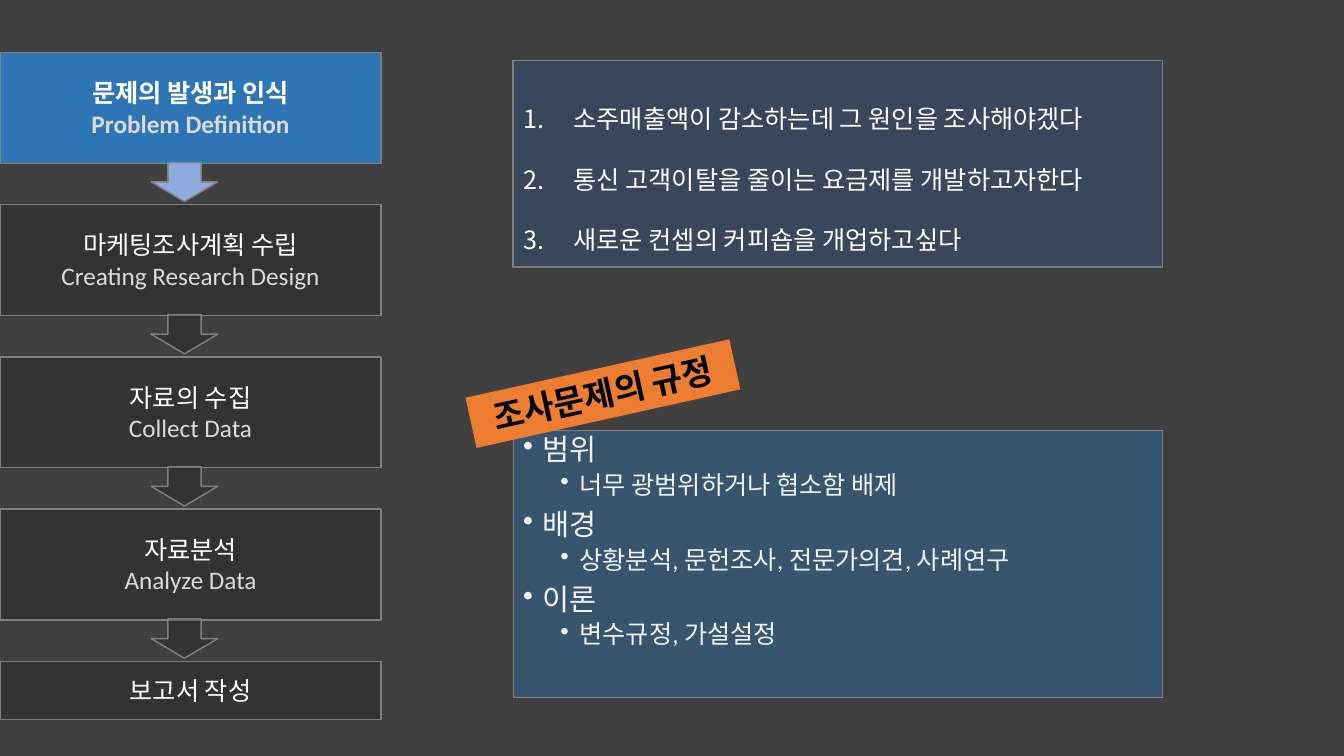
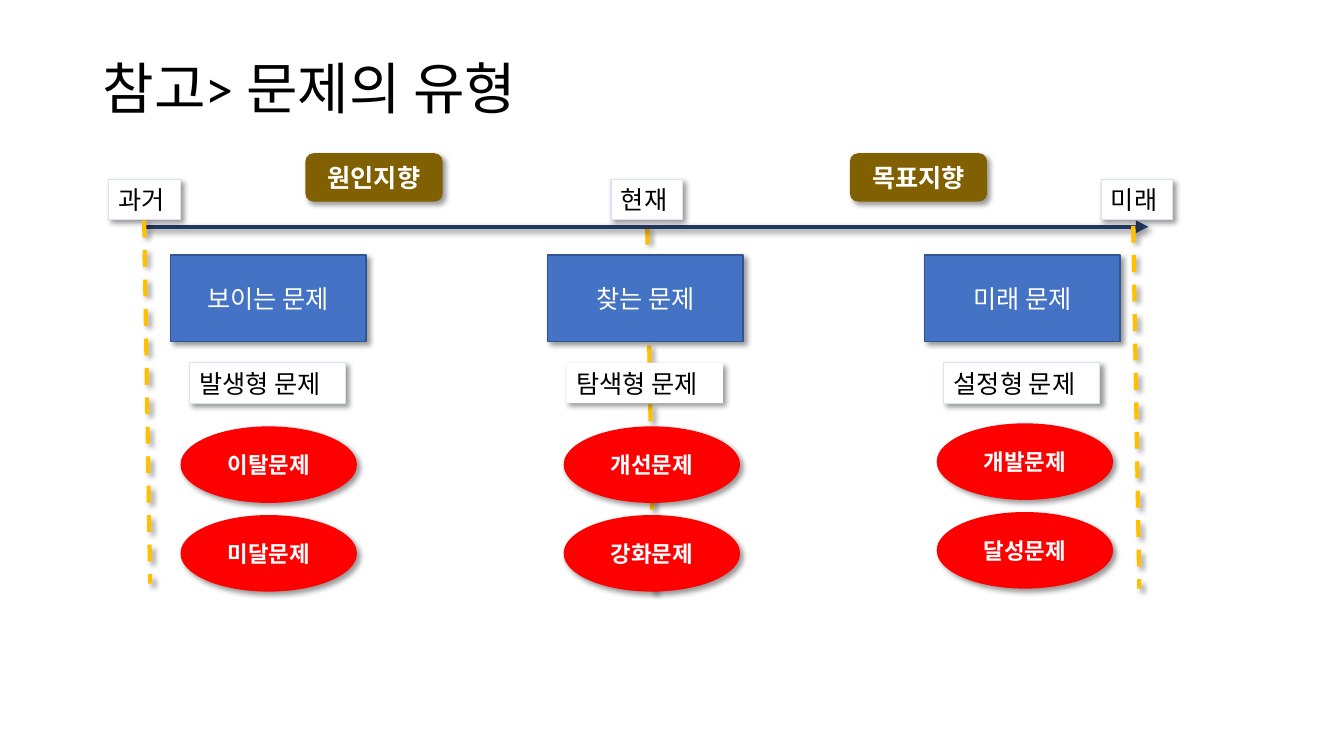
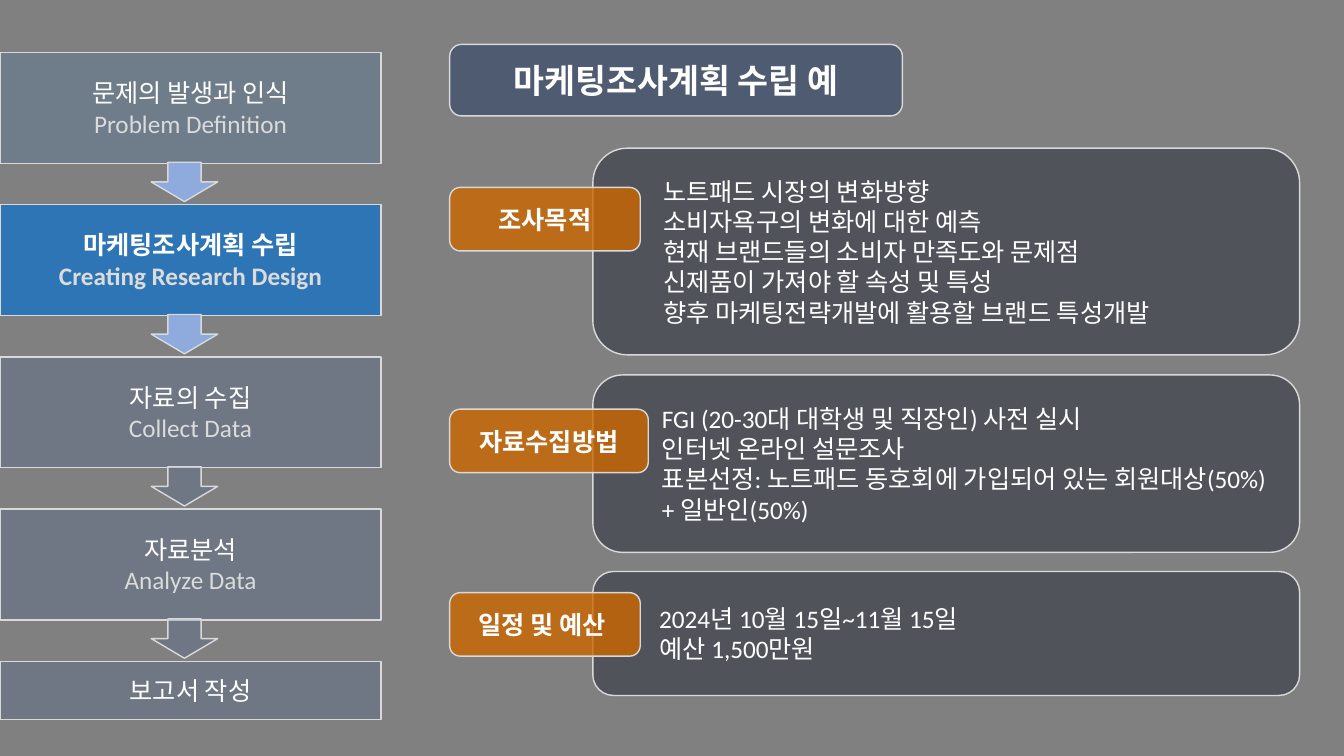
from pptx import Presentation
from pptx.dml.color import RGBColor
from pptx.enum.dml import MSO_LINE_DASH_STYLE as Dash
from pptx.enum.shapes import MSO_CONNECTOR as Link, MSO_SHAPE as Form
from pptx.enum.text import MSO_ANCHOR as Anchor, MSO_AUTO_SIZE as Fit, PP_ALIGN as Align
from pptx.oxml.ns import qn
from pptx.util import Inches, Pt
from lxml.etree import SubElement as sub

WHITE = RGBColor(0xFF, 0xFF, 0xFF)
BLACK = RGBColor(0, 0, 0)
DARK = RGBColor(0x40, 0x40, 0x40)
GRAY = RGBColor(0x80, 0x80, 0x80)
SILVER = RGBColor(0xD9, 0xD9, 0xD9)
PALE = RGBColor(0xDB, 0xDB, 0xDB)
FOG = RGBColor(0xF2, 0xF2, 0xF2)
SKY = RGBColor(0x8F, 0xAA, 0xDC)
BLUE = RGBColor(0x2E, 0x75, 0xB6)
DEEP = RGBColor(0x2F, 0x55, 0x97)
NAVY = RGBColor(0x20, 0x38, 0x64)
ROYAL = RGBColor(0x44, 0x72, 0xC4)
RIM = RGBColor(0x32, 0x54, 0x91)
ICE = RGBColor(0xDA, 0xE3, 0xF3)
SLATE = RGBColor(0x22, 0x2A, 0x35)
ORANGE = RGBColor(0xED, 0x7D, 0x31)
RUST = RGBColor(0xCC, 0x66, 0x00)
GOLD = RGBColor(0xFF, 0xC0, 0x00)
OLIVE = RGBColor(0x80, 0x60, 0x00)
RED = RGBColor(0xFF, 0, 0)

STEPS = [
    ("문제의 발생과 인식", "Problem Definition"),
    ("마케팅조사계획 수립", "Creating Research Design"),
    ("자료의 수집", "Collect Data"),
    ("자료분석", "Analyze Data"),
    ("보고서 작성",),
]
GOALS = [
    "소주매출액이 감소하는데 그 원인을 조사해야겠다",
    "통신 고객이탈을 줄이는 요금제를 개발하고자한다",
    "새로운 컨셉의 커피숍을 개업하고싶다",
]
SCOPE = [
    ("범위", "너무 광범위하거나 협소함 배제"),
    ("배경", "상황분석, 문헌조사, 전문가의견, 사례연구"),
    ("이론", "변수규정, 가설설정"),
]
KINDS = [
    ("보이는 문제", "발생형 문제", ("이탈문제", "미달문제"), 0.1, 1.7, ICE),
    ("찾는 문제", "탐색형 문제", ("개선문제", "강화문제"), 0.16, 1.7, None),
    ("미래 문제", "설정형 문제", ("개발문제", "달성문제"), 0.12, 1.67, ICE),
]
PLANS = [
    (1.47, 2.05, 0.39, 1.89, "조사목적", [
        "노트패드 시장의 변화방향",
        "소비자욕구의 변화에 대한 예측",
        "현재 브랜드들의 소비자 만족도와 문제점",
        "신제품이 가져야 할 속성 및 특성",
        "향후 마케팅전략개발에 활용할 브랜드 특성개발",
    ]),
    (3.72, 1.76, 0.34, 1.97, "자료수집방법", [
        "FGI (20-30대 대학생 및 직장인) 사전 실시",
        "인터넷 온라인 설문조사",
        "표본선정: 노트패드 동호회에 가입되어 있는 회원대상(50%) + 일반인(50%)",
    ]),
    (5.67, 1.23, 0.21, 1.89, "일정 및 예산 ", [
        "2024년 10월 15일~11월 15일",
        "예산 1,500만원",
    ]),
]


def effect(shape, shade):
    """Give a shape a soft shadow, or none at all."""
    props = shape._element.spPr
    for old in props.findall(qn("a:effectLst")):
        props.remove(old)
    box = sub(props, qn("a:effectLst"))
    if shade:
        drop = sub(box, qn("a:outerShdw"), blurRad=str(Pt(4)), dist=str(Pt(3)),
                   dir="2700000", algn="tl", rotWithShape="0")
        tint = sub(drop, qn("a:srgbClr"), val="000000")
        sub(tint, qn("a:alpha"), val="40000")


def add_box(slide, form, at, fill, edge=None, width=1, alpha=100, shade=False):
    """Add a filled preset shape."""
    shape = slide.shapes.add_shape(form, *map(Inches, at))
    shape.fill.solid()
    shape.fill.fore_color.rgb = fill
    if alpha < 100:
        tint = shape._element.spPr.find(qn("a:solidFill"))[0]
        sub(tint, qn("a:alpha"), val=str(alpha * 1000))
    if edge is None:
        shape.line.fill.background()
    else:
        shape.line.color.rgb = edge
        shape.line.width = Pt(width)
    effect(shape, shade)
    return shape


def write(shape, lines, size=18, color=WHITE, bold=False, align=Align.CENTER,
          anchor=Anchor.MIDDLE, face="Calibri"):
    """Fill a shape with lines of text and return its paragraphs."""
    frame = shape.text_frame
    frame.word_wrap = True
    frame.vertical_anchor = anchor
    frame.text = "\n".join(lines)
    for para in frame.paragraphs:
        para.alignment = align
        font = para.font
        font.name, font.size, font.bold = face, Pt(size), bold
        font.color.rgb = color
    return frame.paragraphs


def hug(shape):
    """Let a shape fit its unwrapped text."""
    shape.text_frame.word_wrap = False
    shape.text_frame.auto_size = Fit.SHAPE_TO_FIT_TEXT


def indent(para, left, hang=0, level=0, mark=None):
    """Set the indent, level and bullet or number of a paragraph."""
    para.level = level
    props = para._p.get_or_add_pPr()
    props.set("marL", str(Inches(left)))
    props.set("indent", str(Inches(hang)))
    if mark == "1.":
        bullet = props.makeelement(qn("a:buAutoNum"), {"type": "arabicPeriod"})
    elif mark:
        bullet = props.makeelement(qn("a:buChar"), {"char": mark})
    else:
        bullet = props.makeelement(qn("a:buNone"), {})
    props.find(qn("a:defRPr")).addprevious(bullet)


def add_line(slide, start, end, color, dash=False, arrow=False):
    """Add a thick shaded line, dashed or with an arrowhead."""
    line = slide.shapes.add_connector(Link.STRAIGHT, *map(Inches, start + end))
    line.line.color.rgb = color
    line.line.width = Pt(3)
    if dash:
        line.line.dash_style = Dash.DASH
    if arrow:
        sub(line.line._get_or_add_ln(), qn("a:tailEnd"), type="triangle")
    effect(line, True)


def add_page(deck, color):
    """Add a blank slide with a plain background."""
    slide = deck.slides.add_slide(deck.slide_layouts[6])
    slide.background.fill.solid()
    slide.background.fill.fore_color.rgb = color
    return slide


def add_flow(slide, left, top, active, past, rest, edge):
    """Draw the research steps with the active one lit."""
    for i, lines in enumerate(STEPS):
        y = top + i * 1.51
        fill, alpha = (BLUE, 100) if i == active else (past if i < active else rest, 20)
        step = add_box(slide, Form.RECTANGLE, (left, y, 3.78, 1.1 if lines[1:] else 0.58),
                       fill, edge, alpha=alpha)
        paras = write(step, lines, bold=i == active)
        if lines[1:]:
            paras[1].font.color.rgb = PALE
            fill, alpha = (SKY, 100) if i <= active else (rest, 20)
            add_box(slide, Form.DOWN_ARROW, (left + 1.5, y + 1.09, 0.66, 0.39),
                    fill, edge, alpha=alpha)


def add_goals(slide, left, top):
    """Draw the numbered list of problems."""
    panel = add_box(slide, Form.RECTANGLE, (left, top, 6.44, 2.05), DEEP, GRAY, alpha=30)
    for para in write(panel, GOALS, align=Align.LEFT):
        para.line_spacing = 2.0
        indent(para, 0.5, -0.5, mark="1.")


def add_scope(slide, left, top):
    """Draw the bulleted panel and its tilted stamp."""
    panel = add_box(slide, Form.RECTANGLE, (left, top, 6.44, 2.65), BLUE, GRAY, 0.75, 40)
    lines = [line for pair in SCOPE for line in pair]
    paras = write(panel, lines, color=FOG, align=Align.LEFT, anchor=Anchor.TOP)
    for i, para in enumerate(paras):
        level = i % 2
        size, gap, inset = [(21, 7.5, 0.19), (18, 3.8, 0.56)][level]
        para.font.size = Pt(size)
        para.space_before = Pt(gap)
        para.line_spacing = 0.9
        indent(para, inset, -0.19, level, "•")
    stamp = add_box(slide, Form.RECTANGLE, (left - 0.45, top - 0.62, 2.68, 0.51), ORANGE)
    stamp.rotation = 347.5
    write(stamp, ["조사문제의 규정"], 24, BLACK, True, anchor=Anchor.TOP, face="Arial")
    hug(stamp)


def add_title(slide, text):
    """Write the slide title."""
    title = slide.shapes.add_textbox(*map(Inches, (0.92, 0.4, 11.5, 1.02)))
    write(title, [text], 40, BLACK, align=Align.LEFT)[0].line_spacing = 0.9


def add_tag(slide, left, top, width, text, edge=ICE):
    """Draw a small white label."""
    tag = add_box(slide, Form.RECTANGLE, (left, top, width, 0.4), WHITE, edge, 0.75, shade=True)
    write(tag, [text], color=BLACK, align=Align.LEFT, anchor=Anchor.TOP)
    hug(tag)


def add_kind(slide, left, top, name, label, cases, shift, drop, edge):
    """Draw one column: a problem type, its label and its cases."""
    head = add_box(slide, Form.RECTANGLE, (left, top, 1.94, 0.86), ROYAL, RIM, shade=True)
    write(head, [name])
    add_tag(slide, left + 0.19, top + 1.07, 1.55, label, edge)
    for i, case in enumerate(cases):
        at = (left + shift, top + drop + i * 0.88, 1.75, 0.76)
        write(add_box(slide, Form.OVAL, at, RED, shade=True), [case], 16, bold=True)


def add_axis(slide, left, top):
    """Draw the time axis with its tags and badges."""
    add_line(slide, (left, top), (left + 9.96, top), NAVY, arrow=True)
    for x, text in ((-0.35, "과거"), (4.63, "현재"), (9.49, "미래")):
        add_tag(slide, left + x, top - 0.47, 0.71, text)
    for x, text in ((1.6, "원인지향"), (7, "목표지향")):
        at = (left + x, top - 0.73, 1.36, 0.48)
        badge = add_box(slide, Form.ROUNDED_RECTANGLE, at, OLIVE, shade=True)
        write(badge, [text], bold=True)


def add_plan(slide, left, top, height, drop, width, name, lines):
    """Draw one plan row: a text panel and its name plate."""
    panel = add_box(slide, Form.ROUNDED_RECTANGLE, (left + 1.42, top, 7.01, height),
                    SLATE, SILVER, alpha=50)
    for para in write(panel, lines, align=Align.LEFT):
        indent(para, 0.5, level=1)
    plate = add_box(slide, Form.ROUNDED_RECTANGLE, (left, top + drop, width, 0.63),
                    RUST, SILVER, alpha=80)
    write(plate, [name], bold=True)


def problem_page(deck):
    """Build the slide on defining the problem."""
    slide = add_page(deck, DARK)
    add_flow(slide, 0, 0.52, 0, BLACK, BLACK, GRAY)
    add_goals(slide, 5.09, 0.6)
    add_scope(slide, 5.09, 4.27)


def types_page(deck):
    """Build the slide on types of problems."""
    slide = add_page(deck, WHITE)
    add_line(slide, (6.42, 2.26), (6.48, 5.87), GOLD, dash=True)
    add_title(slide, "참고> 문제의 유형")
    for i, kind in enumerate(KINDS):
        add_kind(slide, 1.69 + i * 3.74, 2.53, *kind)
    add_axis(slide, 1.43, 2.25)
    for x, y in ((1.43, 2.19), (11.24, 2.24)):
        add_line(slide, (x, y), (x + 0.06, y + 3.6), GOLD, dash=True)


def plan_page(deck):
    """Build the slide with the sample research plan."""
    slide = add_page(deck, GRAY)
    banner = add_box(slide, Form.ROUNDED_RECTANGLE, (4.46, 0.44, 4.49, 0.71),
                     NAVY, SILVER, alpha=50)
    write(banner, ["마케팅조사계획 수립 예"], 24, bold=True)
    for top, *plan in PLANS:
        add_plan(slide, 4.46, top, *plan)
    add_flow(slide, 0, 0.52, 1, BLUE, DEEP, SILVER)


def main():
    """Build and save the deck."""
    deck = Presentation()
    deck.slide_width, deck.slide_height = Inches(13.33), Inches(7.5)
    problem_page(deck)
    types_page(deck)
    plan_page(deck)
    deck.save("out.pptx")


if __name__ == "__main__":
    main()
